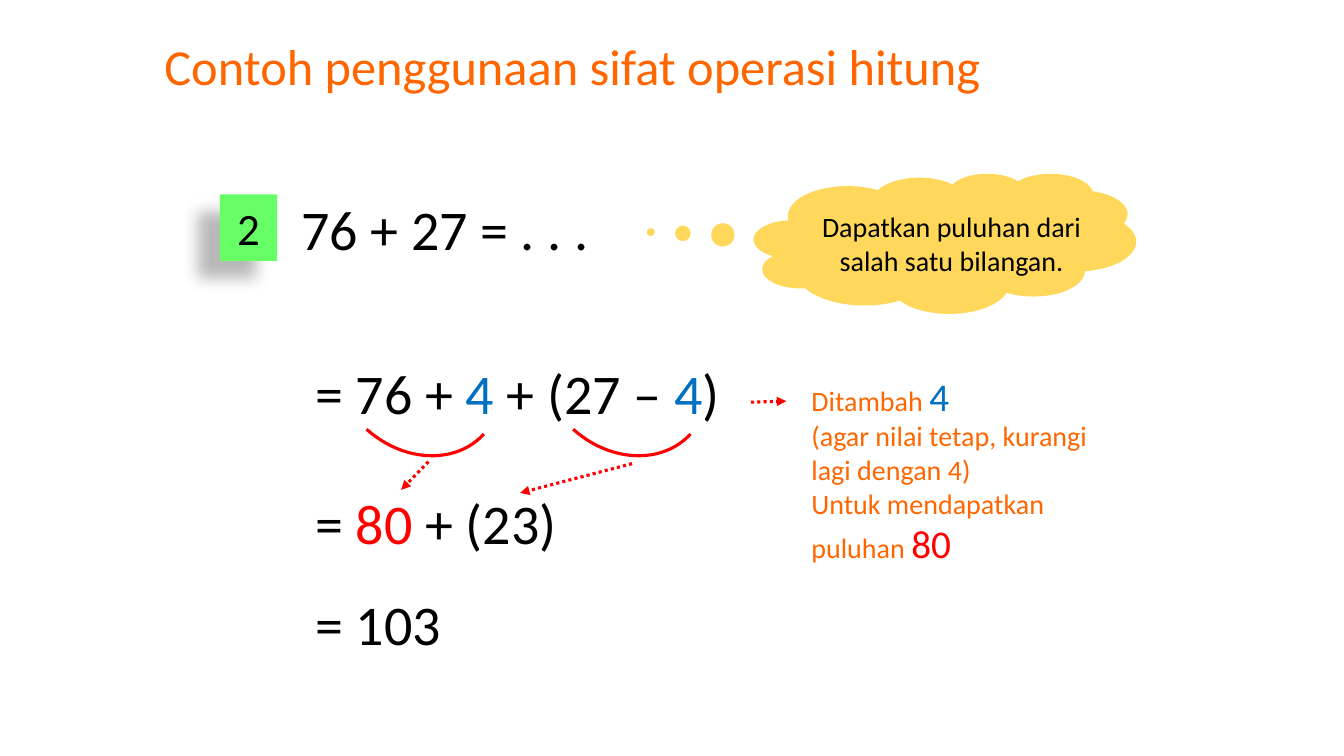
from lxml import etree
from pptx import Presentation
from pptx import util as u
from pptx.dml.color import RGBColor
from pptx.enum import dml, shapes, text
from pptx.oxml.ns import qn

WIDTH, HEIGHT = u.Inches(13.33), u.Inches(7.5)
FONT = "Calibri"
COLORS = {
    "orange": "FF6600",
    "black": "000000",
    "blue": "0070C0",
    "red": "FF0000",
    "green": "66FF66",
    "yellow": "FFD85B",
}


def rgb(color):
    return RGBColor.from_string(COLORS[color])


def across(percent):
    return round(WIDTH * percent / 100)


def down(percent):
    return round(HEIGHT * percent / 100)


def area(left, top, width, height):
    """Turn percentages of the slide into a position and size."""
    return across(left), down(top), across(width), down(height)


def write(frame, paragraphs, wrap=True, align=text.PP_ALIGN.LEFT,
          anchor=text.MSO_ANCHOR.TOP):
    """Fill a frame; each paragraph is a list of (words, size, color) runs."""
    frame.word_wrap = wrap
    frame.vertical_anchor = anchor
    for number, runs in enumerate(paragraphs):
        paragraph = frame.add_paragraph() if number else frame.paragraphs[0]
        paragraph.alignment = align
        for words, size, color in runs:
            run = paragraph.add_run()
            run.text = words
            run.font.name = FONT
            run.font.size = u.Pt(size)
            run.font.color.rgb = rgb(color)


def add_title(slide, words):
    title = slide.shapes.title
    title.left, title.top, title.width, title.height = area(11.48, 4, 62.78, 9.47)
    title.text_frame.auto_size = text.MSO_AUTO_SIZE.NONE
    write(title.text_frame, [[(words, 36, "orange")]], wrap=False)


def add_text(slide, place, paragraphs, **layout):
    box = slide.shapes.add_textbox(*area(*place))
    write(box.text_frame, paragraphs, **layout)


def add_equation(slide, left, top, width, *parts):
    runs = [(words, 40, color) for words, color in parts]
    add_text(slide, (left, top, width, 10.27), [runs], wrap=False)


def add_filled(slide, preset, place, color):
    shape = slide.shapes.add_shape(preset, *area(*place))
    shape.shadow.inherit = False
    shape.fill.solid()
    shape.fill.fore_color.rgb = rgb(color)
    shape.line.fill.background()
    return shape


def add_number_tile(slide, number):
    tile = add_filled(slide, shapes.MSO_SHAPE.RECTANGLE,
                      (16.35, 25.73, 4.28, 8.8), "green")
    effects = tile._element.spPr.find(qn("a:effectLst"))
    shadow = etree.SubElement(
        effects, qn("a:outerShdw"), blurRad=str(u.Pt(11.8)),
        dist=str(u.Pt(19.7)), dir=str(141 * 60000), algn="ctr", rotWithShape="0")
    tint = etree.SubElement(shadow, qn("a:srgbClr"), val=COLORS["black"])
    etree.SubElement(tint, qn("a:alpha"), val="28000")
    write(tile.text_frame, [[(number, 32, "black")]], wrap=False,
          align=text.PP_ALIGN.CENTER, anchor=text.MSO_ANCHOR.MIDDLE)


def add_thought(slide, words):
    cloud = add_filled(slide, shapes.MSO_SHAPE.CLOUD_CALLOUT,
                       (56.1, 22.93, 28.43, 18.53), "yellow")
    cloud.adjustments[0], cloud.adjustments[1] = -0.77, -0.08
    add_text(slide, (59.03, 27.07, 23.55, 10.27), [[(words, 20, "black")]],
             align=text.PP_ALIGN.CENTER)


def style_red_line(line):
    line.color.rgb = rgb("red")
    line.width = u.Pt(2.25)


def add_joining_arc(slide, left):
    arc = slide.shapes.add_shape(shapes.MSO_SHAPE.ARC,
                                 *area(left, 37.47, 11.18, 23.87))
    arc.rotation = 132.1
    arc.shadow.inherit = False
    arc.fill.background()
    style_red_line(arc.line)


def add_dotted_arrow(slide, start, end):
    arrow = slide.shapes.add_connector(
        shapes.MSO_CONNECTOR.STRAIGHT,
        across(start[0]), down(start[1]), across(end[0]), down(end[1]))
    style_red_line(arrow.line)
    arrow.line.dash_style = dml.MSO_LINE.ROUND_DOT
    properties = arrow._element.spPr
    etree.SubElement(properties.find(qn("a:ln")), qn("a:tailEnd"), type="triangle")
    etree.SubElement(properties, qn("a:effectLst"))


def main():
    deck = Presentation()
    deck.slide_width, deck.slide_height = WIDTH, HEIGHT
    slide = deck.slides.add_slide(deck.slide_layouts[5])

    add_title(slide, "Contoh penggunaan sifat operasi hitung")
    add_equation(slide, 21.68, 25.07, 24, ("76 + 27 = . . .", "black"))
    add_number_tile(slide, "2")
    add_thought(slide, "Dapatkan puluhan dari salah satu bilangan.")

    steps_left = 22.73
    add_equation(slide, steps_left, 46.8, 31.8,
                 ("= 76 + ", "black"), ("4", "blue"),
                 (" + (27 – ", "black"), ("4", "blue"), (")", "black"))
    add_equation(slide, steps_left, 64, 19.58,
                 ("= ", "black"), ("80", "red"), (" + (23)", "black"))
    add_equation(slide, steps_left, 77.33, 10.95, ("= 103", "black"))

    add_text(slide, (59.63, 48.53, 24.9, 27.33), [
        [("Ditambah ", 20, "orange"), ("4", 28, "blue")],
        [("(agar nilai tetap, kurangi lagi dengan 4)", 20, "orange")],
        [("Untuk mendapatkan puluhan ", 20, "orange"), ("80", 28, "red")],
    ])

    for left in (25.43, 40.8):
        add_joining_arc(slide, left)
    for start, end in (((55.88, 53.2), (58.5, 53.07)),
                       ((31.88, 61.07), (29.85, 64.8)),
                       ((47.03, 61.33), (38.7, 65.2))):
        add_dotted_arrow(slide, start, end)

    deck.save("out.pptx")


if __name__ == "__main__":
    main()
